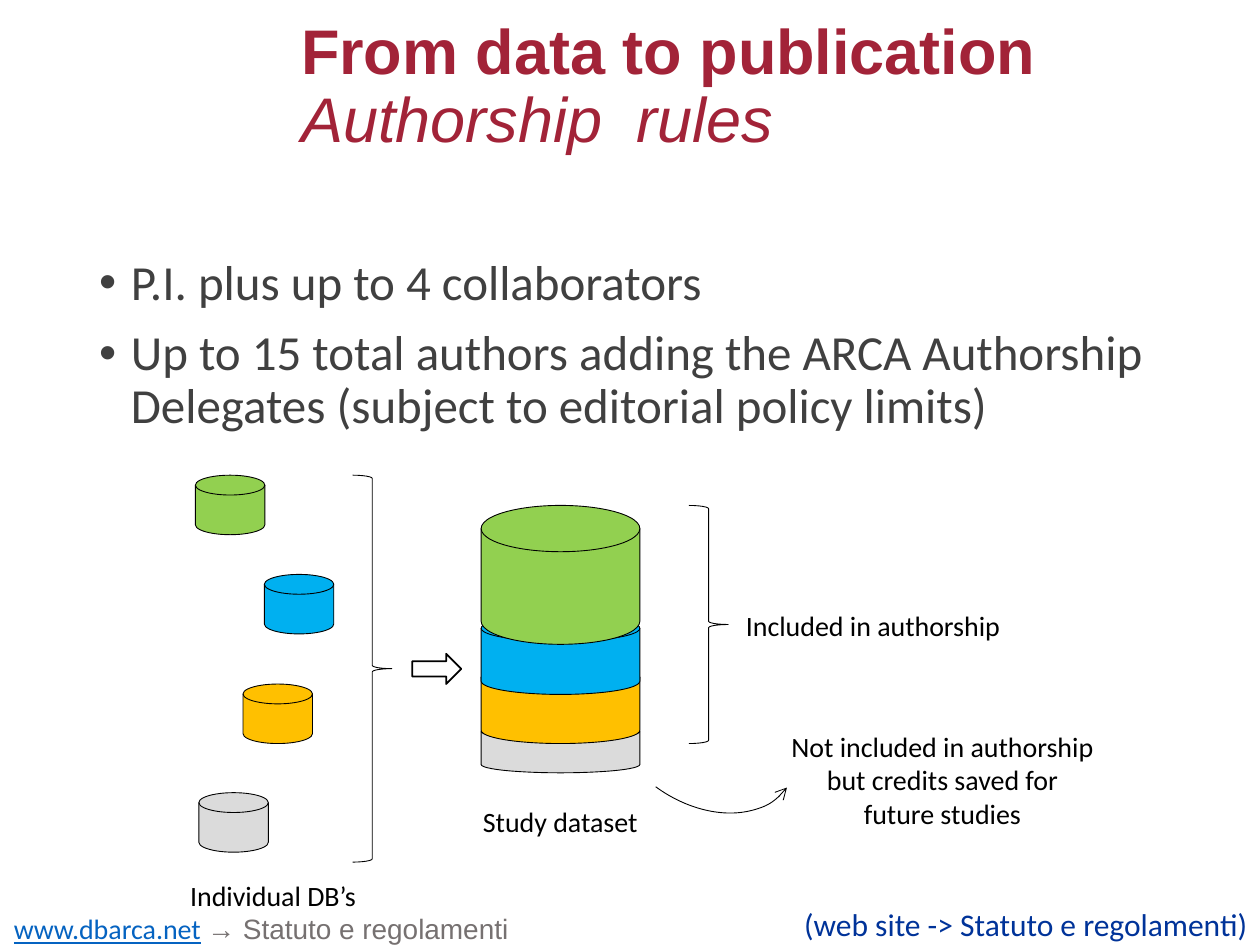
from lxml.etree import SubElement
from pptx import Presentation
from pptx.dml.color import RGBColor
from pptx.enum.shapes import MSO_SHAPE as Preset
from pptx.enum.text import PP_ALIGN as Align
from pptx.oxml.ns import qn
from pptx.util import Cm, Pt

CRIMSON = RGBColor(0xA2, 0x23, 0x38)
NAVY = RGBColor(0x00, 0x33, 0x99)
LINK_BLUE = RGBColor(0x05, 0x63, 0xC1)
BLACK = RGBColor(0x00, 0x00, 0x00)
DARK_GRAY = RGBColor(0x40, 0x40, 0x40)
MID_GRAY = RGBColor(0x76, 0x71, 0x71)
SILVER = RGBColor(0xDB, 0xDB, 0xDB)
GREEN = RGBColor(0x92, 0xD0, 0x50)
BLUE = RGBColor(0x00, 0xB0, 0xF0)
AMBER = RGBColor(0xFF, 0xC0, 0x00)

presentation = Presentation()
presentation.slide_width = Cm(25.4)
presentation.slide_height = Cm(19.05)
slide = presentation.slides.add_slide(presentation.slide_layouts[6])


def add_text(text, left, top, width, height, size, color=BLACK, align=Align.LEFT, font="Calibri"):
    box = slide.shapes.add_textbox(Cm(left), Cm(top), Cm(width), Cm(height))
    box.text_frame.word_wrap = True
    box.text_frame.text = text
    for paragraph in box.text_frame.paragraphs:
        paragraph.alignment = align
        for run in paragraph.runs:
            run.font.name = font
            run.font.size = Pt(size)
            run.font.color.rgb = color
    return box.text_frame


def add_outline(preset, left, top, width, height, fill=None, weight=0.5):
    shape = slide.shapes.add_shape(preset, Cm(left), Cm(top), Cm(width), Cm(height))
    shape.shadow.inherit = False
    if fill is None:
        shape.fill.background()
    else:
        shape.fill.solid()
        shape.fill.fore_color.rgb = fill
    shape.line.color.rgb = BLACK
    shape.line.width = Pt(weight)
    return shape


title = add_text("", 5.82, 0.28, 17.86, 4.29, 36)
heading = title.paragraphs[0]
heading.text = "From data to publication\vAuthorship  rules"
heading.line_spacing = 0.9
for run in heading.runs:
    run.font.name = "Arial"
    run.font.size = Pt(36)
    run.font.color.rgb = CRIMSON
heading.runs[0].font.bold = True
heading.runs[1].font.italic = True

add_text("(web site -> Statuto e regolamenti)", 8.51, 18.11, 16.89, 1.02, 18, NAVY, Align.RIGHT)

rules = add_text(
    "P.I. plus up to 4 collaborators\n"
    "Up to 15 total authors adding the ARCA Authorship Delegates (subject to editorial policy limits)",
    1.75, 5.08, 21.9, 12.09, 28, DARK_GRAY)
for index, paragraph in enumerate(rules.paragraphs):
    paragraph.line_spacing = 0.9
    paragraph.space_before = Pt(10 if index else 0)
    properties = paragraph._p.get_or_add_pPr()
    properties.set("marL", str(Cm(0.64)))
    properties.set("indent", str(-Cm(0.64)))
    SubElement(properties, qn("a:buFont"), typeface="Arial")
    SubElement(properties, qn("a:buChar"), char="•")

for left, top, color in [(5.33, 11.58, BLUE), (4.9, 13.79, AMBER), (3.94, 9.58, GREEN), (4.01, 15.98, SILVER)]:
    add_outline(Preset.FLOWCHART_MAGNETIC_DISK, left, top, 1.4, 1.2, color)

for top, height, color in [(14.58, 1, SILVER), (13.39, 1.6, AMBER), (12.4, 1.6, BLUE), (10.19, 2.8, GREEN)]:
    add_outline(Preset.FLOWCHART_MAGNETIC_DISK, 9.7, top, 3.2, height, color)

add_outline(Preset.RIGHT_BRACE, 7.11, 9.58, 0.79, 7.8)
add_outline(Preset.RIGHT_BRACE, 13.89, 10.19, 0.79, 4.8)
add_outline(Preset.RIGHT_ARROW, 8.31, 13.18, 0.99, 0.61, weight=1)

credit_arc = add_outline(Preset.ARC, 11.99, 13.06, 4.29, 3.1)
credit_arc.rotation = 216.2
credit_arc._element.spPr.find(qn("a:xfrm")).set("flipH", "1")
SubElement(credit_arc.line._get_or_add_ln(), qn("a:tailEnd"), type="arrow")

for text, left, top, width, height in [
    ("Individual DB’s", 3.51, 17.58, 3.99, 0.94),
    ("Study dataset", 9.3, 16.1, 3.99, 0.94),
    ("Included in authorship", 14.3, 12.14, 6.6, 0.94),
    ("Not included in authorship but credits saved for future studies", 15.7, 14.58, 6.6, 2.31),
]:
    add_text(text, left, top, width, height, 16, align=Align.CENTER)

source = add_text("www.dbarca.net", 0.03, 18.26, 15.16, 0.94, 16, LINK_BLUE).paragraphs[0]
source.runs[0].font.underline = True
for text, font, color in [(" ", "Calibri", BLACK), ("→ Statuto e regolamenti", "Arial", MID_GRAY)]:
    run = source.add_run()
    run.text = text
    run.font.name = font
    run.font.size = Pt(16)
    run.font.color.rgb = color

presentation.save("out.pptx")
